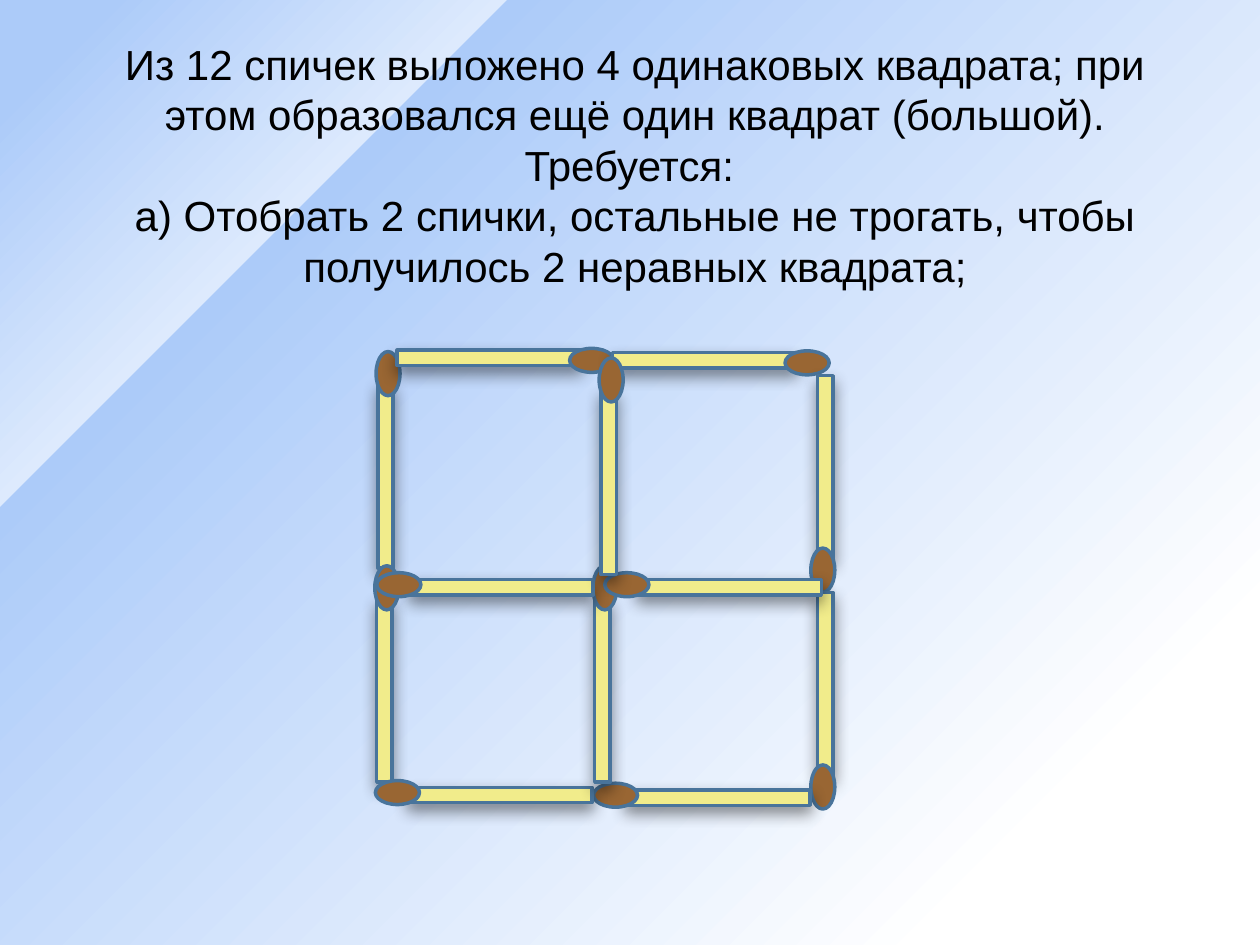
from lxml import etree
from pptx import Presentation
from pptx.dml.color import RGBColor
from pptx.enum.shapes import MSO_SHAPE
from pptx.enum.text import MSO_ANCHOR, PP_ALIGN
from pptx.util import Pt

MINUS = MSO_SHAPE.MATH_MINUS
OVAL = MSO_SHAPE.OVAL
MIDDLE = MSO_ANCHOR.MIDDLE
CENTER = PP_ALIGN.CENTER

BLACK = RGBColor(0x00, 0x00, 0x00)
WHITE = RGBColor(0xFF, 0xFF, 0xFF)
YELLOW = RGBColor(0xF1, 0xEC, 0x8B)
BROWN = RGBColor(0x99, 0x66, 0x33)
STEEL = RGBColor(0x49, 0x74, 0x9B)
SKY = RGBColor(0xAC, 0xCB, 0xF9)
HAZE = RGBColor(0xB0, 0xCE, 0xF9)
PALE = RGBColor(0xDD, 0xEA, 0xFD)

NS = "http://schemas.openxmlformats.org/drawingml/2006/main"
STOPS = [(15, WHITE, 100), (77, SKY, 100), (77, HAZE, 100),
         (77, PALE, 95), (95, SKY, 100), (95, SKY, 100)]

TASK = ("Из 12 спичек выложено 4 одинаковых квадрата; при этом образовался "
        "ещё один квадрат (большой). Требуется: \vа) Отобрать 2 спички, "
        "остальные не трогать, чтобы получилось 2 неравных квадрата;")

MATCHES = [
    (220.3, 272.2, 90), (279.4, 204.5, 180), (219.6, 394.6, 90),
    (402.5, 205.9, 180), (471.6, 267.1, 270), (471.6, 391, 270),
    (410.4, 455.8, 0), (285.8, 454.3, 0), (344.2, 394.6, 90),
    (286.6, 335.5, 0), (416.9, 335.5, 0), (347.8, 275.8, 90),
]


def add(node, tag, **attrs):
    values = {key: str(value) for key, value in attrs.items()}
    return etree.SubElement(node, f"{{{NS}}}{tag}", values)


def tint(node, color, alpha):
    add(add(node, "srgbClr", val=color), "alpha", val=alpha * 1000)


def write(frame, text, font="Arial", size=24, color=BLACK, align=CENTER):
    para = frame.paragraphs[0]
    para.text = text
    para.alignment = align
    for run in para.runs:
        run.font.name = font
        run.font.size = Pt(size)
        run.font.color.rgb = color


class Board:
    stick = (142.6, 37.4)
    head = (25.2, 13.7)
    rise = 1.4

    def __init__(self, slide):
        self.slide = slide

    def backdrop(self, stops):
        self.slide.background.fill.solid()
        back = self.slide.element.xpath("./p:cSld/p:bg/p:bgPr")[0]
        back.remove(back[0])
        grad = etree.Element(f"{{{NS}}}gradFill", rotWithShape="1")
        back.insert(0, grad)
        group = add(grad, "gsLst")
        for place, color, alpha in stops:
            tint(add(group, "gs", pos=place * 1000), color, alpha)
        blend = add(grad, "path", path="circle")
        add(blend, "fillToRect", l=100000, t=100000)
        add(grad, "tileRect", r=-100000, b=-100000)

    def title(self, text, left, top, width, height):
        box = self.slide.shapes.add_textbox(
            Pt(left), Pt(top), Pt(width), Pt(height))
        frame = box.text_frame
        frame.word_wrap = True
        frame.vertical_anchor = MIDDLE
        write(frame, text)

    def piece(self, group, kind, left, top, size, color):
        shape = group.shapes.add_shape(
            kind, Pt(left), Pt(top), Pt(size[0]), Pt(size[1]))
        shape.shadow.inherit = False
        shape.fill.solid()
        shape.fill.fore_color.rgb = color
        shape.line.color.rgb = STEEL
        shape.line.width = Pt(2)
        return shape

    def shade(self, shape):
        effects = shape.element.xpath("./p:spPr/a:effectLst")[0]
        drop = add(effects, "outerShdw", blurRad=Pt(9), dist=Pt(4),
                   dir=5400000, rotWithShape=0)
        tint(drop, BLACK, 43)

    def match(self, x, y, turn):
        group = self.slide.shapes.add_group_shape()
        left = x - self.stick[0] / 2
        stick = self.piece(group, MINUS, left, y - self.stick[1] / 2,
                           self.stick, YELLOW)
        self.shade(stick)
        self.piece(group, OVAL, left, y - self.head[1] / 2 - self.rise,
                   self.head, BROWN)
        group.rotation = turn


def main():
    deck = Presentation()
    deck.slide_width = Pt(720)
    deck.slide_height = Pt(540)
    board = Board(deck.slides.add_slide(deck.slide_layouts[6]))
    board.backdrop(STOPS)
    for x, y, turn in MATCHES:
        board.match(x, y, turn)
    board.title(TASK, 38.9, 49, 648, 90)
    deck.save("out.pptx")


if __name__ == "__main__":
    main()
